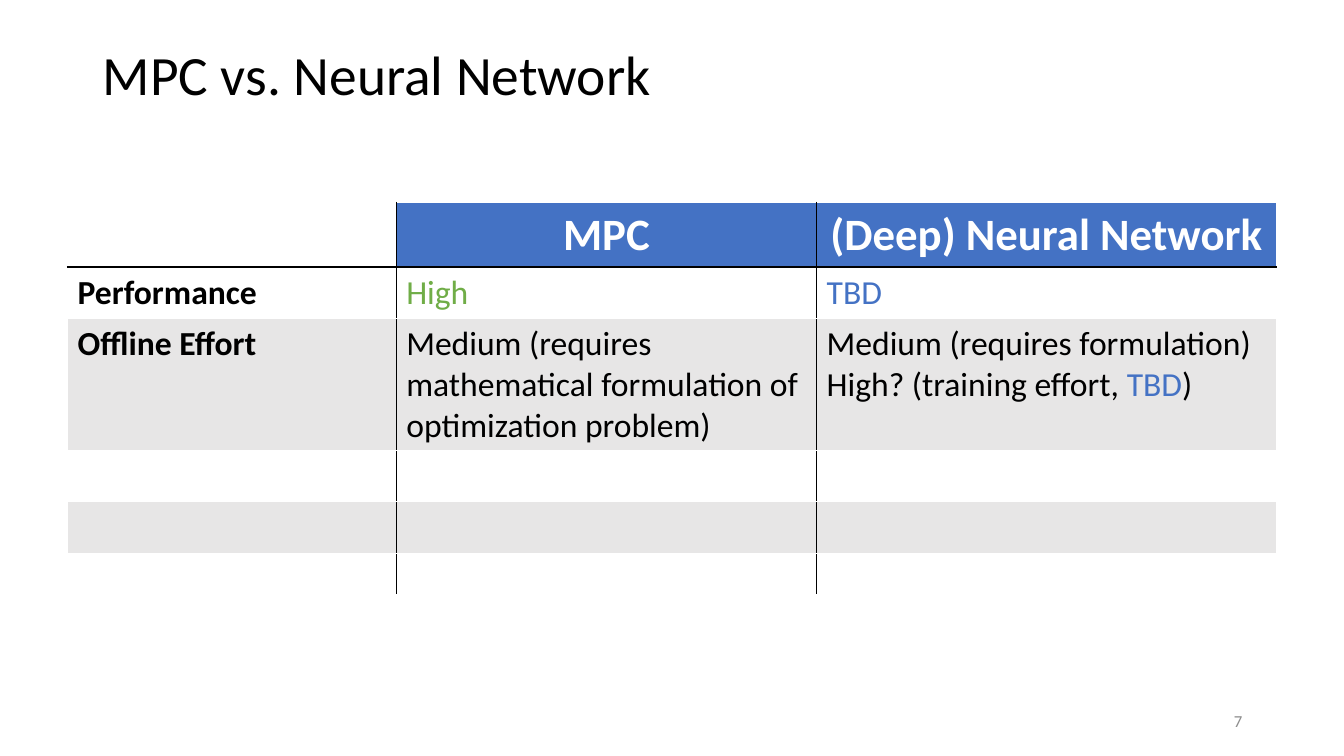
from lxml import etree
from pptx import Presentation
from pptx import util as u
from pptx.dml.color import RGBColor
from pptx.enum import text
from pptx.oxml import ns

WHITE = RGBColor(0xFF, 0xFF, 0xFF)
BLACK = RGBColor(0, 0, 0)
BLUE = RGBColor(0x44, 0x72, 0xC4)
GREEN = RGBColor(0x70, 0xAD, 0x47)
BAND = RGBColor(0xE7, 0xE6, 0xE6)
GRAY = RGBColor(0x8C, 0x8C, 0x8C)

LEFT, MID, RIGHT = text.PP_ALIGN.LEFT, text.PP_ALIGN.CENTER, text.PP_ALIGN.RIGHT

WIDTHS = [3.26, 4.17, 4.56]
HEIGHTS = [0.64, 0.51, 1.31, 0.51, 0.51, 0.41]

# Each cell is a list of lines, each line a list of (words, colour) runs
HEAD = [[], [[("MPC", WHITE)]], [[("(Deep) Neural Network", WHITE)]]]
BODY = [
    [[[("Performance", BLACK)]], [[("High", GREEN)]], [[("TBD", BLUE)]]],
    [[[("Offline Effort", BLACK)]],
     [[("Medium (requires mathematical formulation of optimization problem)", BLACK)]],
     [[("Medium (requires formulation)", BLACK)],
      [("High? (training effort, ", BLACK), ("TBD", BLUE), (")", BLACK)]]],
    [[], [], []],
    [[], [], []],
    [[], [], []],
]


class Deck:
    font = "Calibri"

    def __init__(self):
        self.prs = Presentation()
        self.prs.slide_width = u.Inches(13.33)
        self.prs.slide_height = u.Inches(7.5)
        self.slide = self.prs.slides.add_slide(self.prs.slide_layouts[6])

    def fill_text(self, frame, lines, size, bold=False, align=LEFT, space=None):
        for i, line in enumerate(lines):
            para = frame.add_paragraph() if i else frame.paragraphs[0]
            para.alignment = align
            para.line_spacing = space
            for words, color in line:
                run = para.add_run()
                run.text = words
                run.font.name = self.font
                run.font.size = u.Pt(size)
                run.font.bold = bold
                run.font.color.rgb = color

    def label(self, box, words, size, color, **style):
        frame = self.slide.shapes.add_textbox(*map(u.Inches, box)).text_frame
        frame.word_wrap = True
        frame.vertical_anchor = text.MSO_ANCHOR.MIDDLE
        self.fill_text(frame, [[(words, color)]], size, **style)

    def edge(self, cell, sides):
        props = cell._tc.get_or_add_tcPr()
        for i, (side, color) in enumerate(sides):
            line = etree.Element(ns.qn(f"a:ln{side}"), w=str(u.Pt(1)))
            fill = etree.SubElement(line, ns.qn("a:solidFill"))
            etree.SubElement(fill, ns.qn("a:srgbClr"), val=str(color))
            props.insert(i, line)

    def table(self, left, top, rows):
        grid = self.slide.shapes.add_table(
            len(rows), len(WIDTHS), u.Inches(left), u.Inches(top),
            u.Inches(sum(WIDTHS)), u.Inches(sum(HEIGHTS))).table
        grid.first_row = grid.horz_banding = False
        for col, width in zip(grid.columns, WIDTHS):
            col.width = u.Inches(width)
        for row, height in zip(grid.rows, HEIGHTS):
            row.height = u.Inches(height)
        last = len(WIDTHS) - 1
        for r, row in enumerate(rows):
            for c, lines in enumerate(row):
                cell = grid.cell(r, c)
                cell.fill.solid()
                if r == 0:
                    cell.fill.fore_color.rgb = BLUE if c else WHITE
                    self.fill_text(cell.text_frame, lines, 32, True, MID)
                else:
                    cell.fill.fore_color.rgb = WHITE if r % 2 else BAND
                    self.fill_text(cell.text_frame, lines, 24, c == 0)
                # Black lines between columns and under the header
                self.edge(cell, [("L", BLACK if c else WHITE),
                                 ("R", BLACK if c < last else WHITE),
                                 ("T", BLACK if r == 1 else WHITE),
                                 ("B", BLACK if r == 0 else WHITE)])


def main():
    deck = Deck()
    # Title
    deck.label((0.92, 0.4, 11.5, 0.74), "MPC vs. Neural Network", 39.6, BLACK, space=0.9)
    # Comparison table
    deck.table(0.67, 2.01, [HEAD] + BODY)
    # Page number
    deck.label((9.42, 6.95, 3, 0.4), "7", 12, GRAY, align=RIGHT)
    deck.prs.save("out.pptx")


if __name__ == "__main__":
    main()
